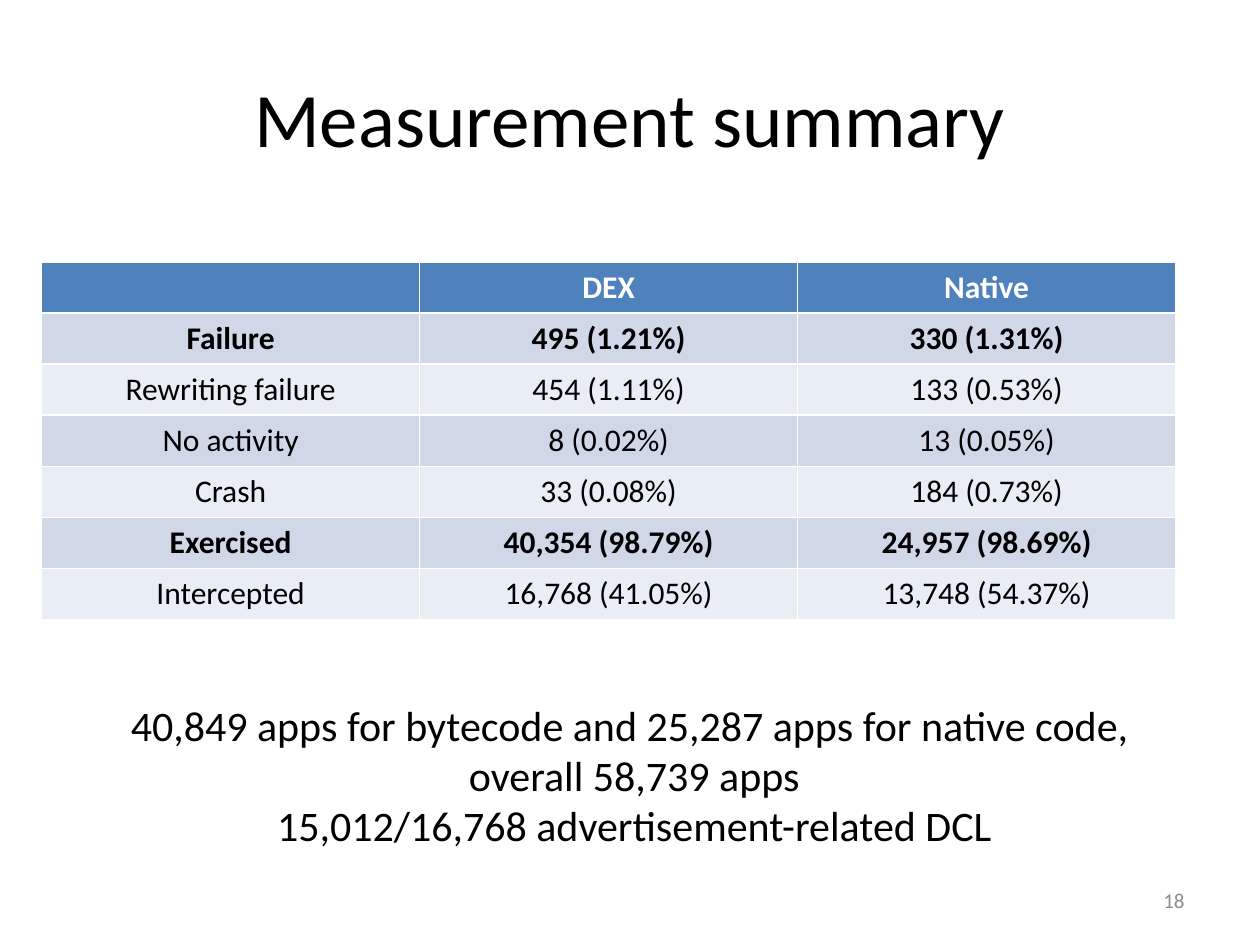
from dataclasses import dataclass
from typing import Any

from pptx import Presentation
from pptx.dml.color import RGBColor
from pptx.enum.text import MSO_ANCHOR as Anchor, PP_ALIGN as Align
from pptx.util import Cm, Pt

FONT = "Calibri"
BLACK, WHITE, GREY = "000000", "FFFFFF", "8C8C8C"
HEADER_FILL = "4F81BD"
BAND_FILLS = ("D0D8E8", "E9EDF4")


@dataclass
class Frame:
    """Position and size in centimetres."""
    left: float
    top: float
    width: float
    height: float

    def lengths(self) -> tuple:
        return Cm(self.left), Cm(self.top), Cm(self.width), Cm(self.height)


@dataclass
class Row:
    cells: tuple
    bold: bool = False


ROWS = [
    Row(("", "DEX", "Native"), bold=True),
    Row(("Failure", "495 (1.21%)", "330 (1.31%)"), bold=True),
    Row(("Rewriting failure", "454 (1.11%)", "133 (0.53%)")),
    Row(("No activity", "8 (0.02%)", "13 (0.05%)")),
    Row(("Crash", "33 (0.08%)", "184 (0.73%)")),
    Row(("Exercised", "40,354 (98.79%)", "24,957 (98.69%)"), bold=True),
    Row(("Intercepted", "16,768 (41.05%)", "13,748 (54.37%)")),
]
TOTALS = [
    "40,849 apps for bytecode and 25,287 apps for native code, ",
    "overall 58,739 apps",
    "15,012/16,768 advertisement-related DCL",
]


def rgb(value: str) -> RGBColor:
    return RGBColor.from_string(value)


def write(text_frame: Any, lines: list, size: float, color: str = BLACK,
          align: Any = Align.CENTER, bold: bool = False) -> None:
    """Fill a text frame with one paragraph per line."""
    formats = {"name": FONT, "size": Pt(size), "bold": bold}
    for index, line in enumerate(lines):
        para = text_frame.paragraphs[0] if index == 0 else text_frame.add_paragraph()
        para.alignment = align
        span = para.add_run() if line else para
        if line:
            span.text = line
        for name, value in formats.items():
            setattr(span.font, name, value)
        span.font.color.rgb = rgb(color)


def add_text(page: Any, frame: Frame, lines: list, size: float, wrap: bool = True,
             anchor: Any = Anchor.TOP, **style: Any) -> None:
    box = page.shapes.add_textbox(*frame.lengths())
    box.text_frame.word_wrap = wrap
    box.text_frame.vertical_anchor = anchor
    write(box.text_frame, lines, size, **style)


def add_results(page: Any, frame: Frame, rows: list) -> None:
    """Draw the results; the default table style supplies the white rules."""
    column_count = len(rows[0].cells)
    table = page.shapes.add_table(len(rows), column_count, *frame.lengths()).table
    for column in table.columns:
        column.width = Cm(frame.width / column_count)
    for index, row in enumerate(rows):
        table.rows[index].height = Cm(frame.height / len(rows))
        is_header = index == 0
        fill = HEADER_FILL if is_header else BAND_FILLS[(index - 1) % 2]
        for cell, text in zip(table.rows[index].cells, row.cells):
            cell.fill.solid()
            cell.fill.fore_color.rgb = rgb(fill)
            write(cell.text_frame, [text], 18, WHITE if is_header else BLACK, bold=row.bold)


def main() -> None:
    deck = Presentation()
    deck.slide_width, deck.slide_height = Cm(25.4), Cm(19.05)
    page = deck.slides.add_slide(deck.slide_layouts[5])

    # Title
    title = page.shapes.title
    title.left, title.top, title.width, title.height = Frame(1.27, 0.76, 22.86, 3.18).lengths()
    title.text_frame.vertical_anchor = Anchor.MIDDLE
    write(title.text_frame, ["Measurement summary"], 44)

    # Results table
    add_results(page, Frame(0.84, 5.28, 22.86, 7.21), ROWS)

    # Page number and totals
    add_text(page, Frame(18.2, 17.65, 5.93, 1.01), ["18"], 12,
             anchor=Anchor.MIDDLE, color=GREY, align=Align.RIGHT)
    add_text(page, Frame(2.34, 13.97, 20.9, 3.33), TOTALS, 24, wrap=False)

    deck.save("out.pptx")


if __name__ == "__main__":
    main()
